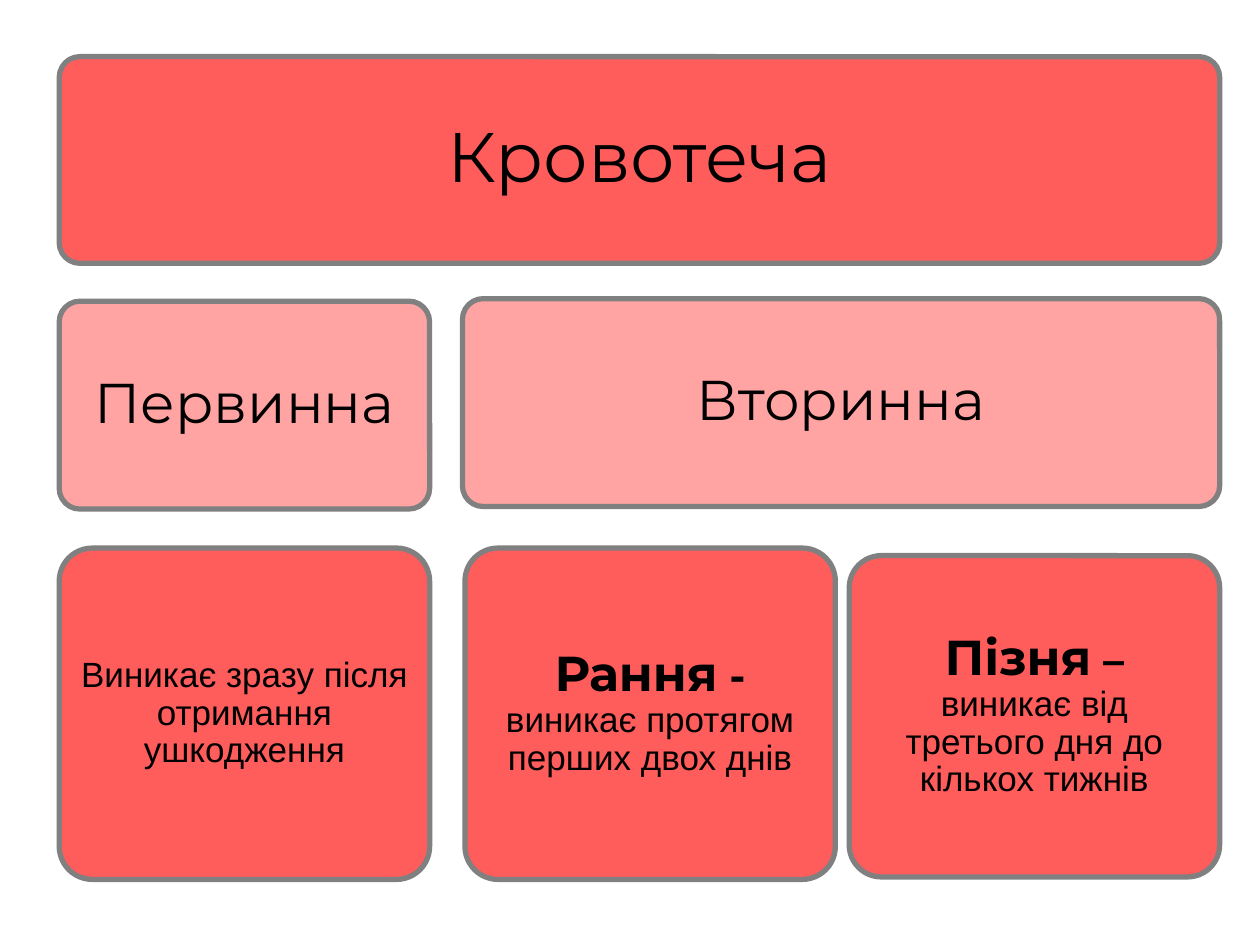
"""Build a one-slide chart that classifies bleeding by the time it starts."""
from lxml.etree import SubElement
from pptx import Presentation
from pptx.dml.color import RGBColor
from pptx.enum.shapes import MSO_SHAPE
from pptx.enum.text import MSO_ANCHOR, PP_ALIGN
from pptx.oxml.ns import qn
from pptx.util import Inches, Pt

RED = RGBColor(0xFF, 0x00, 0x00)
GRAY = RGBColor(0x80, 0x80, 0x80)
BLACK = RGBColor(0x00, 0x00, 0x00)
STRONG, PALE = 64, 36

COLUMNS = {
    "all": (0.47, 9.68),
    "first": (0.47, 3.41),
    "second and third": (3.67, 9.68),
    "second": (3.69, 6.63),
    "third": (6.74, 9.68),
}
ROWS = {
    "title": (0.45, 2.09),
    "primary": (2.39, 4.04),
    "secondary": (2.37, 4.02),
    "details": (4.35, 6.98),
    "late details": (4.41, 6.96),
}
STYLES = {
    "title": {"name": "Montserrat", "size": Pt(40), "bold": False},
    "kind": {"name": "Montserrat", "size": Pt(32), "bold": False},
    "term": {"name": "Montserrat", "size": Pt(28), "bold": True},
    "dash": {"name": "Montserrat", "size": Pt(24), "bold": True},
    "body": {"name": "Arial", "size": Pt(20), "bold": False},
}
BOXES = [
    ("all", "title", STRONG, 0.17, [("Кровотеча", "title")]),
    ("first", "primary", PALE, 0.13, [("Первинна", "kind")]),
    ("first", "details", STRONG, 0.08,
     [("Виникає зразу після отримання ушкодження", "body")]),
    ("second and third", "secondary", PALE, 0.13, [("Вторинна", "kind")]),
    ("second", "details", STRONG, 0.12,
     [("Рання", "term"), (" - ", "dash"),
      ("виникає протягом перших двох днів", "body")]),
    ("third", "late details", STRONG, 0.12,
     [("Пізня", "term"), (" – ", "dash"),
      ("виникає від третього дня до кількох тижнів", "body")]),
]


def set_all(target, values):
    for key, value in values.items():
        setattr(target, key, value)


def add_box(page, column, row, opacity, margin, spans):
    left, right = COLUMNS[column]
    top, bottom = ROWS[row]
    box = page.shapes.add_shape(
        MSO_SHAPE.ROUNDED_RECTANGLE, Inches(left), Inches(top),
        Inches(right - left), Inches(bottom - top))
    box.adjustments[0] = 0.1
    box.shadow.inherit = False
    box.fill.solid()
    box.fill.fore_color.rgb = RED
    color = box.fill._xPr.find(qn("a:solidFill"))[0]
    SubElement(color, qn("a:alpha")).set("val", str(opacity * 1000))
    box.line.color.rgb = GRAY
    box.line.width = Pt(3)

    frame = box.text_frame
    sides = ("left", "top", "right", "bottom")
    set_all(frame, {f"margin_{side}": Inches(margin) for side in sides})
    set_all(frame, {"word_wrap": True, "vertical_anchor": MSO_ANCHOR.MIDDLE})
    para = frame.paragraphs[0]
    set_all(para, {"alignment": PP_ALIGN.CENTER, "line_spacing": 0.9})
    for text, style in spans:
        span = para.add_run()
        span.text = text
        set_all(span.font, STYLES[style])
        span.font.color.rgb = BLACK


def main():
    deck = Presentation()
    deck.slide_width, deck.slide_height = Inches(10), Inches(7.5)
    page = deck.slides.add_slide(deck.slide_layouts[6])
    for box in BOXES:
        add_box(page, *box)
    deck.save("out.pptx")


if __name__ == "__main__":
    main()
